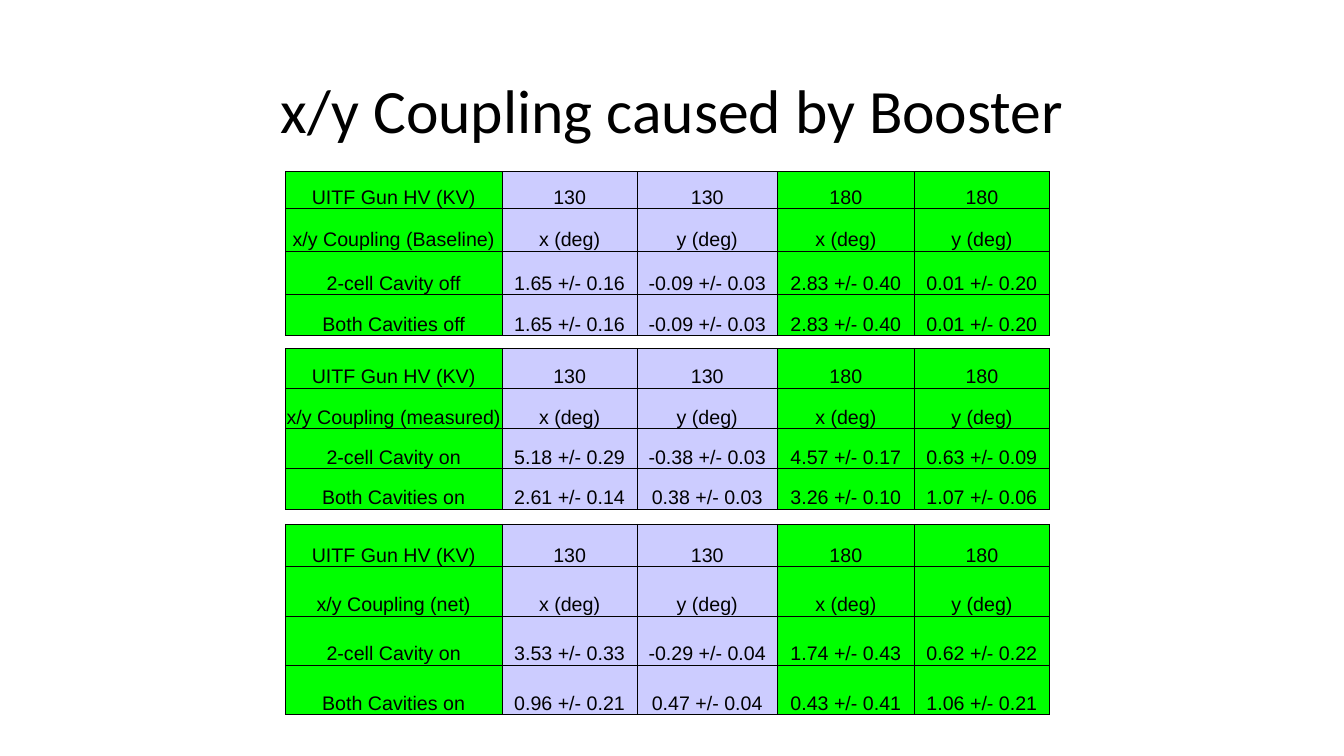
from lxml.etree import SubElement
from pptx import Presentation
from pptx.dml.color import RGBColor
from pptx.enum.text import MSO_ANCHOR, PP_ALIGN
from pptx.oxml.ns import qn
from pptx.util import Inches, Pt

TITLE = "x/y Coupling caused by Booster"
HEAD = ["UITF Gun HV (KV)", "130", "130", "180", "180"]
AXES = ["x (deg)", "y (deg)"] * 2
TABLES = [
    ("Baseline", 1.7, [0.37, 0.42, 0.43, 0.41], [
        ["2-cell Cavity off", "1.65 +/- 0.16", "-0.09 +/- 0.03", "2.83 +/- 0.40", "0.01 +/- 0.20"],
        ["Both Cavities off", "1.65 +/- 0.16", "-0.09 +/- 0.03", "2.83 +/- 0.40", "0.01 +/- 0.20"],
    ]),
    ("measured", 3.46, [0.39, 0.4, 0.4, 0.4], [
        ["2-cell Cavity on", "5.18 +/- 0.29", "-0.38 +/- 0.03", "4.57 +/- 0.17", "0.63 +/- 0.09"],
        ["Both Cavities on", "2.61 +/- 0.14", "0.38 +/- 0.03", "3.26 +/- 0.10", "1.07 +/- 0.06"],
    ]),
    ("net", 5.2, [0.42, 0.49, 0.49, 0.49], [
        ["2-cell Cavity on", "3.53 +/- 0.33", "-0.29 +/- 0.04", "1.74 +/- 0.43", "0.62 +/- 0.22"],
        ["Both Cavities on", "0.96 +/- 0.21", "0.47 +/- 0.04", "0.43 +/- 0.41", "1.06 +/- 0.21"],
    ]),
]
COLORS = {"ink": "000000", "green": "00FF00", "lilac": "CCCCFF"}
FILLS = ["green", "lilac", "lilac", "green", "green"]
COLS = [2.15, 1.34, 1.39, 1.36, 1.34]
LEFT = 2.83
BOX = {"left": 0.92, "top": 0.4, "width": 11.5, "height": 1.45}
CELL = {
    "vertical_anchor": MSO_ANCHOR.BOTTOM,
    "margin_left": Inches(0.01),
    "margin_right": Inches(0.01),
    "margin_top": Inches(0.01),
    "margin_bottom": 0,
}
PLAIN = {"first_row": False, "horz_banding": False}
FONTS = {
    "title": {"name": "Calibri", "size": Pt(44), "bold": False},
    "cell": {"name": "Arial", "size": Pt(14), "bold": False},
}


def apply(item, values):
    for key, value in values.items():
        setattr(item, key, value)


def style(para, kind):
    para.alignment = PP_ALIGN.CENTER
    apply(para.font, FONTS[kind])
    para.font.color.rgb = RGBColor.from_string(COLORS["ink"])


def border(cell):
    props = cell._tc.get_or_add_tcPr()
    for side in "LRTB":
        line = SubElement(props, qn("a:ln" + side), w=str(Pt(0.5)))
        fill = SubElement(line, qn("a:solidFill"))
        SubElement(fill, qn("a:srgbClr"), val=COLORS["ink"])


def add_grid(slide, top, sizes, rows):
    frame = slide.shapes.add_table(
        len(rows), len(COLS), Inches(LEFT), Inches(top),
        Inches(sum(COLS)), Inches(sum(sizes)))
    table = frame.table
    apply(table, PLAIN)
    for col, width in zip(table.columns, COLS):
        col.width = Inches(width)
    for row, height, texts in zip(table.rows, sizes, rows):
        row.height = Inches(height)
        for cell, text, fill in zip(row.cells, texts, FILLS):
            cell.text = text
            apply(cell, CELL)
            border(cell)
            cell.fill.solid()
            cell.fill.fore_color.rgb = RGBColor.from_string(COLORS[fill])
            style(cell.text_frame.paragraphs[0], "cell")


def main():
    deck = Presentation()
    apply(deck, {"slide_width": Inches(13.33), "slide_height": Inches(7.5)})
    slide = deck.slides.add_slide(deck.slide_layouts[5])
    title = slide.shapes.title
    apply(title, {key: Inches(value) for key, value in BOX.items()})
    title.text = TITLE
    title.text_frame.vertical_anchor = MSO_ANCHOR.MIDDLE
    para = title.text_frame.paragraphs[0]
    para.line_spacing = 0.9
    style(para, "title")
    for name, top, sizes, data in TABLES:
        label = [f"x/y Coupling ({name})"] + AXES
        add_grid(slide, top, sizes, [HEAD, label] + data)
    deck.save("out.pptx")


if __name__ == "__main__":
    main()
